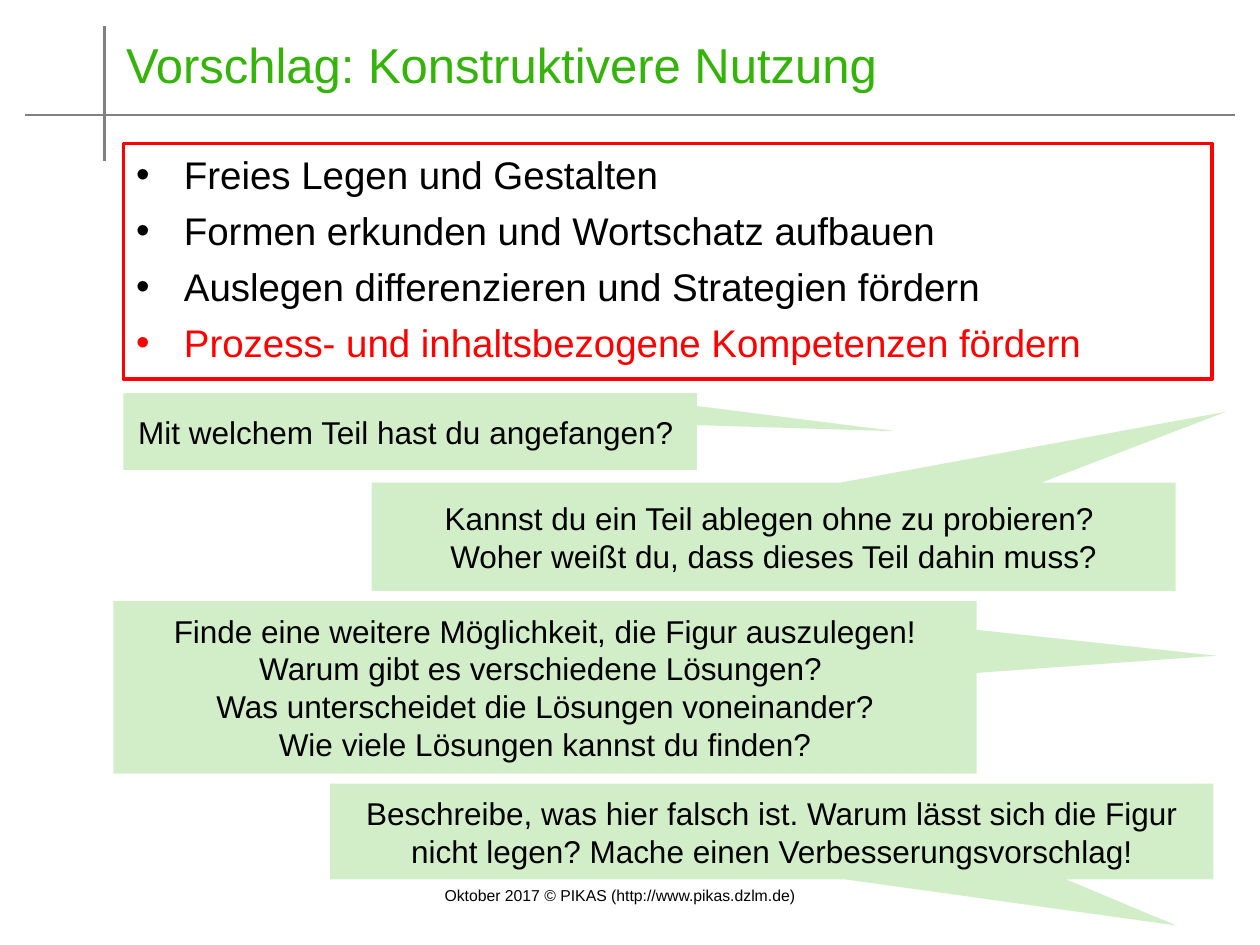
from lxml import etree
from pptx import Presentation
from pptx.dml.color import RGBColor
from pptx.enum.shapes import MSO_CONNECTOR, MSO_SHAPE
from pptx.enum.text import MSO_ANCHOR, MSO_AUTO_SIZE, PP_ALIGN
from pptx.oxml.ns import qn
from pptx.util import Inches, Pt

STRAIGHT = MSO_CONNECTOR.STRAIGHT
RECT, CALLOUT = MSO_SHAPE.RECTANGLE, MSO_SHAPE.RECTANGULAR_CALLOUT
LEFT, CENTER = PP_ALIGN.LEFT, PP_ALIGN.CENTER
TOP, MIDDLE = MSO_ANCHOR.TOP, MSO_ANCHOR.MIDDLE
NO_FIT = MSO_AUTO_SIZE.NONE

WIDTH, HEIGHT = 10, 7.5
GREEN, RED, BLACK, GRAY = "34B409", "FF0000", "000000", "808080"
CALLOUT_OPACITY = 22
BULLET_INDENT = 0.38

GOALS = [
    ("Freies Legen und Gestalten", BLACK),
    ("Formen erkunden und Wortschatz aufbauen", BLACK),
    ("Auslegen differenzieren und Strategien fördern", BLACK),
    ("Prozess- und inhaltsbezogene Kompetenzen fördern", RED),
]

# Box (left, top, width, height), pointer tip relative to the box, text
CALLOUTS = [
    ((0.98, 3.12, 4.55, 0.61), (0.848, -0.004),
     "Mit welchem Teil hast du angefangen? "),
    ((2.95, 3.83, 6.38, 0.86), (0.563, -1.154),
     "Kannst du ein Teil ablegen ohne zu probieren? \n"
     "Woher weißt du, dass dieses Teil dahin muss?"),
    ((0.9, 4.77, 6.85, 1.37), (0.778, -0.183),
     "Finde eine weitere Möglichkeit, die Figur auszulegen!\n"
     "Warum gibt es verschiedene Lösungen? \n"
     "Was unterscheidet die Lösungen voneinander?\n"
     "Wie viele Lösungen kannst du finden?"),
    ((2.62, 6.22, 7.01, 0.76), (0.458, 0.981),
     "Beschreibe, was hier falsch ist. Warum lässt sich die Figur "
     "nicht legen? Mache einen Verbesserungsvorschlag!"),
]


def rgb(value):
    return RGBColor.from_string(value)


def place(sp, box):
    for name, value in zip(("left", "top", "width", "height"), box):
        setattr(sp, name, Inches(value))


def format_frame(tf, anchor, wrap=True):
    options = {"auto_size": NO_FIT, "word_wrap": wrap, "vertical_anchor": anchor}
    for name, value in options.items():
        setattr(tf, name, value)


def write(p, text, size, color, align=LEFT):
    p.text = text
    p.alignment = align
    for r in p.runs:
        for name, value in {"name": "Arial", "size": Pt(size), "bold": False}.items():
            setattr(r.font, name, value)
        r.font.color.rgb = rgb(color)


def add_bullet(p):
    pPr = p._p.get_or_add_pPr()
    pPr.set("marL", str(Inches(BULLET_INDENT)))
    pPr.set("indent", str(-Inches(BULLET_INDENT)))
    etree.SubElement(pPr, qn("a:buFont")).set("typeface", "Arial")
    etree.SubElement(pPr, qn("a:buChar")).set("char", "•")


def add_rule(s, x1, y1, x2, y2):
    line = s.shapes.add_connector(STRAIGHT, *map(Inches, (x1, y1, x2, y2)))
    line.line.color.rgb = rgb(GRAY)
    line.line.width = Pt(1.25)
    etree.SubElement(line._element.spPr, qn("a:effectLst"))


def add_footer(s, text):
    sp = s.shapes.add_textbox(*map(Inches, (3.43, 6.98, 3.05, 0.25)))
    format_frame(sp.text_frame, TOP, wrap=False)
    write(sp.text_frame.paragraphs[0], text, 9, BLACK)


def fill_title(s, text):
    sp = s.shapes.title
    place(sp, (0.9, 0.29, 9, 0.44))
    format_frame(sp.text_frame, MIDDLE)
    write(sp.text_frame.paragraphs[0], text, 28, GREEN)


def fill_goals(s, goals):
    sp = s.placeholders[1]
    place(sp, (0.98, 1.15, 8.83, 4.95))
    tf = sp.text_frame
    format_frame(tf, TOP)
    for i, (text, color) in enumerate(goals):
        p = tf.add_paragraph() if i else tf.paragraphs[0]
        add_bullet(p)
        p.space_before = Pt(5.5 if i else 0)
        write(p, text, 22, color)


def add_frame(s, box):
    sp = s.shapes.add_shape(RECT, *map(Inches, box))
    sp.shadow.inherit = False
    sp.fill.background()
    sp.line.color.rgb = rgb(RED)
    sp.line.width = Pt(2)


def add_callout(s, box, tip, text):
    sp = s.shapes.add_shape(CALLOUT, *map(Inches, box))
    sp.shadow.inherit = False
    for i, value in enumerate(tip):
        sp.adjustments[i] = value
    sp.fill.solid()
    sp.fill.fore_color.rgb = rgb(GREEN)
    color = sp._element.spPr.find(f".//{qn('a:srgbClr')}")
    etree.SubElement(color, qn("a:alpha")).set("val", str(CALLOUT_OPACITY * 1000))
    sp.line.fill.background()
    format_frame(sp.text_frame, MIDDLE)
    write(sp.text_frame.paragraphs[0], text, 18, BLACK, CENTER)


def main():
    prs = Presentation()
    prs.slide_width, prs.slide_height = Inches(WIDTH), Inches(HEIGHT)
    s = prs.slides.add_slide(prs.slide_layouts[1])

    # Crossed rules and footer
    add_rule(s, 0.2, 0.91, 9.8, 0.91)
    add_rule(s, 0.83, 0.21, 0.83, 1.28)
    add_footer(s, "Oktober 2017 © PIKAS (http://www.pikas.dzlm.de)")

    # Title and framed list of goals
    fill_title(s, "Vorschlag: Konstruktivere Nutzung")
    fill_goals(s, GOALS)
    add_frame(s, (0.98, 1.14, 8.64, 1.87))

    # Sample questions
    for box, tip, text in CALLOUTS:
        add_callout(s, box, tip, text)

    prs.save("out.pptx")


if __name__ == "__main__":
    main()
